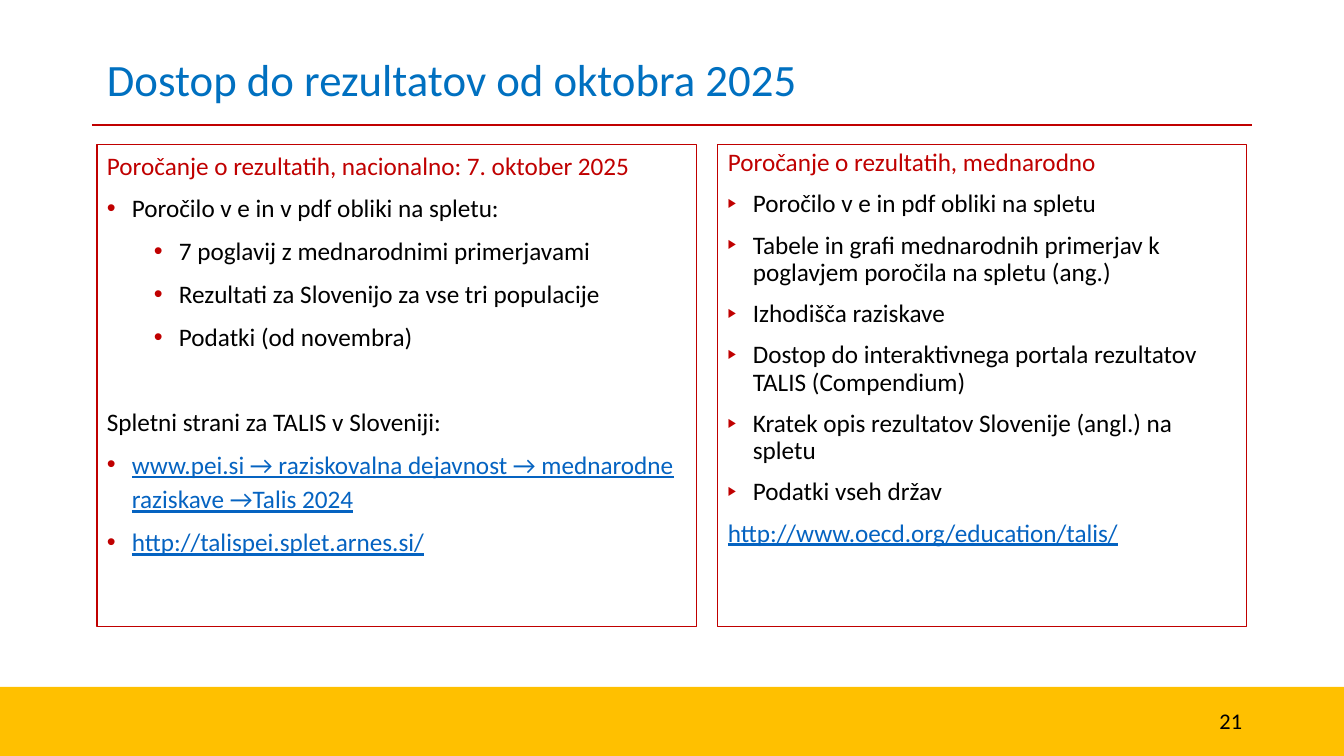
from lxml import etree
from pptx import Presentation
from pptx import util as u
from pptx.dml.color import RGBColor
from pptx.enum import shapes, text
from pptx.oxml.ns import qn

TITLE = "Dostop do rezultatov od oktobra 2025"
PAGE_NUMBER = "21"

# Each line: (kind, wording)
NATIONAL = [
    ("heading", "Poročanje o rezultatih, nacionalno: 7. oktober 2025"),
    ("item", "Poročilo v e in v pdf obliki na spletu:"),
    ("subitem", "7 poglavij z mednarodnimi primerjavami"),
    ("subitem", "Rezultati za Slovenijo za vse tri populacije"),
    ("subitem", "Podatki (od novembra)"),
    ("section", "Spletni strani za TALIS v Sloveniji:"),
    ("link item", "www.pei.si → raziskovalna dejavnost → mednarodne raziskave →Talis 2024"),
    ("link item", "http://talispei.splet.arnes.si/"),
]
INTERNATIONAL = [
    ("heading", "Poročanje o rezultatih, mednarodno"),
    ("item", "Poročilo v e in pdf obliki na spletu"),
    ("item", "Tabele in grafi mednarodnih primerjav k poglavjem poročila na spletu (ang.)"),
    ("item", "Izhodišča raziskave"),
    ("item", "Dostop do interaktivnega portala rezultatov TALIS (Compendium)"),
    ("item", "Kratek opis rezultatov Slovenije (angl.) na spletu"),
    ("item", "Podatki vseh držav"),
    ("link", "http://www.oecd.org/education/talis/"),
]

FONT = "Calibri"
BLUE = RGBColor(0x00, 0x70, 0xC0)
RED = RGBColor(0xC0, 0x00, 0x00)
YELLOW = RGBColor(0xFF, 0xC0, 0x00)
LINK = RGBColor(0x05, 0x63, 0xC1)
BLACK = RGBColor(0x00, 0x00, 0x00)

WIDTH, HEIGHT = 1344, 756
PX = u.Inches(1) / 100.8
PANEL_TOP, PANEL_HEIGHT = 145, 482
HANGING = 25
INDENTS = {"item": 25, "link item": 25, "subitem": 72}
COLOURS = {"heading": RED, "link": LINK, "link item": LINK}
SECTION_GAP = 36

# Panels: left, width, bullet, bullet size in %, line spacing, space before, lines
PANELS = [
    (97, 600, "•", 100, 1.14, 6, NATIONAL),
    (718, 529, "▶", 50, 0.9, 10, INTERNATIONAL),
]


def px(*lengths):
    return [u.Emu(round(length * PX)) for length in lengths]


def style(para, size, colour, underline=None):
    for span in para.runs:
        span.font.name = FONT
        span.font.size = u.Pt(size)
        span.font.color.rgb = colour
        span.font.underline = underline


def add_bullet(para, char, percent, indent):
    props = para._p.get_or_add_pPr()
    left, hanging = px(indent, HANGING)
    props.set("marL", str(left))
    props.set("indent", str(-hanging))
    colour = etree.SubElement(props, qn("a:buClr"))
    etree.SubElement(colour, qn("a:srgbClr"), val=str(RED))
    etree.SubElement(props, qn("a:buSzPct"), val=str(percent * 1000))
    etree.SubElement(props, qn("a:buFont"), typeface="Arial")
    etree.SubElement(props, qn("a:buChar"), char=char)


def add_rectangle(page, *place):
    box = page.shapes.add_shape(shapes.MSO_SHAPE.RECTANGLE, *px(*place))
    box.shadow.inherit = False
    return box


def add_label(page, place, wording, size, colour, align):
    box = page.shapes.add_textbox(*px(*place))
    frame = box.text_frame
    frame.word_wrap = True
    frame.vertical_anchor = text.MSO_ANCHOR.MIDDLE
    frame.text = wording
    para = frame.paragraphs[0]
    para.alignment = align
    style(para, size, colour)


def add_panel(page, left, width, char, percent, spacing, gap, lines):
    box = add_rectangle(page, left, PANEL_TOP, width, PANEL_HEIGHT)
    box.fill.background()
    box.line.color.rgb = RED
    box.line.width = u.Pt(0.75)
    frame = box.text_frame
    frame.word_wrap = True
    frame.vertical_anchor = text.MSO_ANCHOR.TOP
    frame.text = "\n".join(wording for _, wording in lines)
    for index, (para, (kind, _)) in enumerate(zip(frame.paragraphs, lines)):
        para.alignment = text.PP_ALIGN.LEFT
        para.line_spacing = spacing if index else min(spacing, 1.0)
        if index:
            para.space_before = u.Pt(SECTION_GAP if kind == "section" else gap)
        if kind in INDENTS:
            para.level = int(kind == "subitem")
            add_bullet(para, char, percent, INDENTS[kind])
        style(para, 18, COLOURS.get(kind, BLACK), kind.startswith("link") or None)


def main():
    deck = Presentation()
    deck.slide_width, deck.slide_height = px(WIDTH, HEIGHT)
    page = deck.slides.add_slide(deck.slide_layouts[6])

    band = add_rectangle(page, 0, 687, WIDTH, HEIGHT - 687)
    band.fill.solid()
    band.fill.fore_color.rgb = YELLOW
    band.line.fill.background()

    rule = page.shapes.add_connector(
        shapes.MSO_CONNECTOR.STRAIGHT, *px(92, 125, 1252, 125))
    rule.line.color.rgb = RED
    rule.line.width = u.Pt(2)
    etree.SubElement(rule._element.spPr, qn("a:effectLst"))

    add_label(page, (97, 47, 869, 64), TITLE, 32, BLUE, text.PP_ALIGN.LEFT)
    for panel in PANELS:
        add_panel(page, *panel)
    add_label(page, (1163, 701, 89, 40), PAGE_NUMBER, 16, BLACK, text.PP_ALIGN.RIGHT)
    deck.save("out.pptx")


if __name__ == "__main__":
    main()
